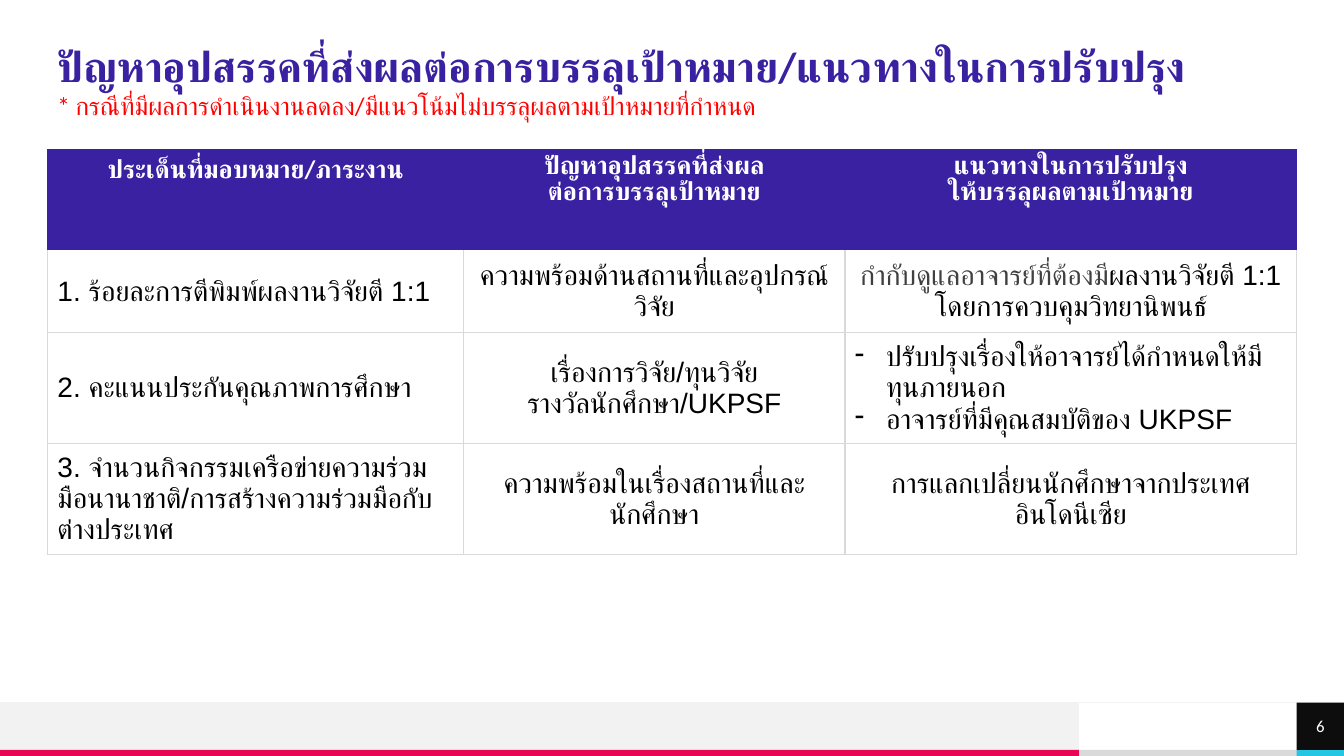
import pptx
import pptx.dml.color
import pptx.enum.shapes
import pptx.enum.text
import pptx.oxml
import pptx.oxml.ns
import pptx.util
from dataclasses import dataclass
from pptx.util import Inches

ALIGN = pptx.enum.text.PP_ALIGN
ANCHOR = pptx.enum.text.MSO_ANCHOR
SHAPE = pptx.enum.shapes.MSO_SHAPE
NS = pptx.oxml.ns.nsdecls("a")


@dataclass(frozen=True)
class Theme:
    heading: str = "Calibri"
    body: str = "Arial"
    purple: str = "3921A1"
    red: str = "FF0000"
    pink: str = "E80554"
    cyan: str = "25C6E3"
    white: str = "FFFFFF"
    black: str = "000000"
    near_black: str = "0D0D0D"
    dark_gray: str = "404040"
    border: str = "D9D9D9"
    gray: str = "DADADA"
    light_gray: str = "F2F2F2"
    title: int = 30
    cell: int = 20
    header: int = 18
    small: int = 12


T = Theme()
COLUMNS = [4.13, 3.78, 4.48]
ROWS = [1.0, 0.82, 1.1, 1.1]
HEADERS = [
    ["ประเด็นที่มอบหมาย/ภาระงาน"],
    ["ปัญหาอุปสรรคที่ส่งผล", "ต่อการบรรลุเป้าหมาย"],
    ["แนวทางในการปรับปรุง", "ให้บรรลุผลตามเป้าหมาย"],
]
# A paragraph is a string, or a list of (text, colour) pairs.
BODY = [
    [["1. ร้อยละการตีพิมพ์ผลงานวิจัยตี 1:1"],
     ["ความพร้อมด้านสถานที่และอุปกรณ์วิจัย"],
     [[("กำกับดูแลอาจารย์ที่ต้องมี", T.dark_gray),
       ("ผลงานวิจัยตี 1:1 โดยการควบคุมวิทยานิพนธ์", T.black)]]],
    [["2. คะแนนประกันคุณภาพการศึกษา"],
     ["เรื่องการวิจัย/ทุนวิจัย", "รางวัลนักศึกษา/UKPSF"],
     ["ปรับปรุงเรื่องให้อาจารย์ได้กำหนดให้มีทุนภายนอก", "อาจารย์ที่มีคุณสมบัติของ UKPSF"]],
    [["3. จำนวนกิจกรรมเครือข่ายความร่วมมือนานาชาติ/การสร้างความร่วมมือกับต่างประเทศ"],
     ["ความพร้อมในเรื่องสถานที่และนักศึกษา"],
     ["การแลกเปลี่ยนนักศึกษาจากประเทศอินโดนีเซีย"]],
]
BULLETED = (2, 2)


def rgb(color):
    return pptx.dml.color.RGBColor.from_string(color)


def add_text(p, text, size=T.cell, font=T.body, color=T.black, bold=False):
    """Append a run, naming the font for Latin and Thai script alike."""
    r = p.add_run()
    r.text = text
    r.font.size = pptx.util.Pt(size)
    r.font.name = font
    r.font.bold = bold
    r.font.color.rgb = rgb(color)
    r.font._element.append(pptx.oxml.parse_xml(f'<a:cs {NS} typeface="{font}"/>'))


def paragraphs(tf, count):
    return [tf.paragraphs[0]] + [tf.add_paragraph() for _ in range(count - 1)]


def add_rect(s, left, top, width, height, color):
    sp = s.shapes.add_shape(SHAPE.RECTANGLE, Inches(left), Inches(top), Inches(width), Inches(height))
    sp.shadow.inherit = False
    sp.fill.solid()
    sp.fill.fore_color.rgb = rgb(color)
    sp.line.fill.background()
    return sp


def set_dash(p):
    pPr = p._p.get_or_add_pPr()
    pPr.set("marL", str(Inches(0.31)))
    pPr.set("indent", str(-Inches(0.31)))
    pPr.append(pptx.oxml.parse_xml(f'<a:buChar {NS} char="-"/>'))


def style_cell(cell, fill, edges):
    """Fill the cell and draw only the named edges (of L, R, T, B)."""
    cell.fill.solid()
    cell.fill.fore_color.rgb = rgb(fill)
    tcPr = cell._tc.get_or_add_tcPr()
    for i, edge in enumerate("LRTB"):
        paint = (f'<a:solidFill><a:srgbClr val="{T.border}"/></a:solidFill>'
                 if edge in edges else "<a:noFill/>")
        tcPr.insert(i, pptx.oxml.parse_xml(f'<a:ln{edge} {NS} w="12700">{paint}</a:ln{edge}>'))


def add_header_cell(cell, lines):
    style_cell(cell, T.purple, "")
    for p, line in zip(paragraphs(cell.text_frame, len(lines)), lines):
        p.alignment = ALIGN.CENTER
        if len(lines) > 1:
            p.line_spacing = 0.83
        add_text(p, line, size=T.header, font=T.heading, color=T.white, bold=True)


def add_body_cell(cell, lines, row, col):
    style_cell(cell, T.white, "LRB" if row == 1 else "LRTB")
    cell.vertical_anchor = ANCHOR.MIDDLE
    for p, line in zip(paragraphs(cell.text_frame, len(lines)), lines):
        if (row, col) == BULLETED:
            set_dash(p)
        elif col > 0:
            p.alignment = ALIGN.CENTER
        for text, color in [(line, T.black)] if isinstance(line, str) else line:
            add_text(p, text, color=color)


def add_issue_table(s):
    table = s.shapes.add_table(len(ROWS), len(COLUMNS), Inches(0.47), Inches(1.48),
                               Inches(sum(COLUMNS)), Inches(sum(ROWS))).table
    table.first_row = table.horz_banding = False
    for column, width in zip(table.columns, COLUMNS):
        column.width = Inches(width)
    for row, height in zip(table.rows, ROWS):
        row.height = Inches(height)
    for col, lines in enumerate(HEADERS):
        add_header_cell(table.cell(0, col), lines)
    for row, cells in enumerate(BODY, 1):
        for col, lines in enumerate(cells):
            add_body_cell(table.cell(row, col), lines, row, col)


def add_title(s):
    tf = s.shapes.add_textbox(Inches(0.47), Inches(0.35), Inches(12.23), Inches(0.94)).text_frame
    tf.word_wrap = True
    title, note = paragraphs(tf, 2)
    add_text(title, "ปัญหาอุปสรรคที่ส่งผลต่อการบรรลุเป้าหมาย/แนวทางในการปรับปรุง",
             size=T.title, font=T.heading, color=T.purple, bold=True)
    add_text(note, "* กรณีที่มีผลการดำเนินงานลดลง/มีแนวโน้มไม่บรรลุผลตามเป้าหมายที่กำหนด",
             size=T.header, font=T.heading, color=T.red)


def add_footer(s):
    add_rect(s, 10.7, 7.44, 2.17, 0.06, T.gray)
    add_rect(s, 0, 6.97, 10.7, 0.47, T.light_gray)
    add_rect(s, 0, 7.44, 10.7, 0.06, T.pink)
    add_rect(s, 12.86, 7.44, 0.47, 0.06, T.cyan)
    rule = s.shapes.add_connector(pptx.enum.shapes.MSO_CONNECTOR.STRAIGHT,
                                  Inches(13.33), Inches(6.97), Inches(0), Inches(6.97))
    rule.line.color.rgb = rgb(T.light_gray)
    rule.line.width = pptx.util.Pt(0.5)
    rule._element.spPr.append(pptx.oxml.parse_xml(f"<a:effectLst {NS}/>"))


def add_page_number(s):
    tf = add_rect(s, 12.86, 6.97, 0.47, 0.47, T.near_black).text_frame
    tf.margin_left = tf.margin_top = tf.margin_right = tf.margin_bottom = Inches(0)
    tf.vertical_anchor = ANCHOR.MIDDLE
    p = tf.paragraphs[0]
    p.alignment = ALIGN.CENTER
    add_text(p, "6", size=T.small, font=T.heading, color=T.white)


def main():
    prs = pptx.Presentation()
    prs.slide_width, prs.slide_height = Inches(13.33), Inches(7.5)
    s = prs.slides.add_slide(prs.slide_layouts[6])
    add_footer(s)
    add_issue_table(s)
    add_page_number(s)
    add_title(s)
    prs.save("out.pptx")


if __name__ == "__main__":
    main()
